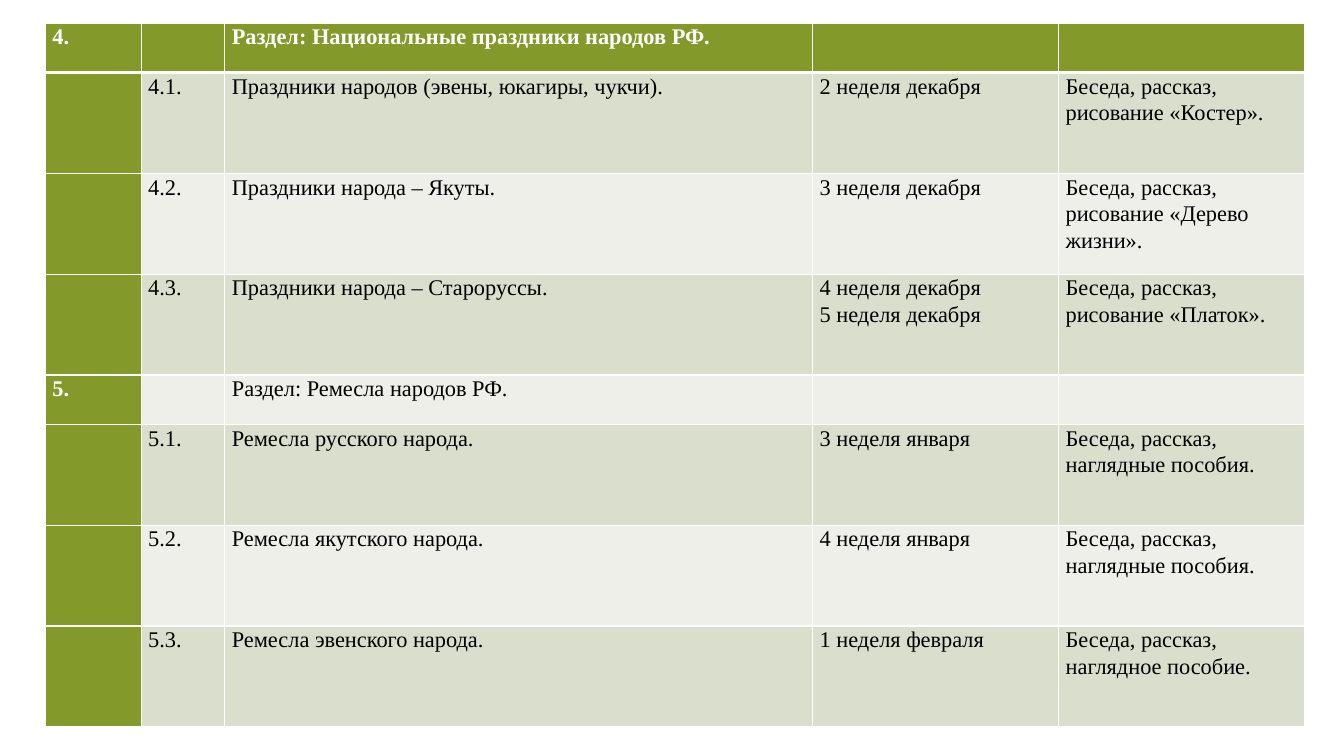
from dataclasses import dataclass

from lxml.etree import SubElement
from pptx import Presentation
from pptx.dml.color import RGBColor
from pptx.oxml.ns import qn
from pptx.util import Emu, Pt


@dataclass(frozen=True)
class Theme:
    font: str = "Times New Roman"
    size: int = 16
    line_spacing: float = 1.07
    accent: str = "83992A"
    dark_band: str = "D9DECD"
    light_band: str = "EDEFE8"
    text: str = "000000"
    inverse: str = "FFFFFF"
    border: int = 1
    header_border: int = 3


def px(length):
    return Emu(length * 9144)


class SlideBuilder:
    def __init__(self, deck, theme):
        self.theme = theme
        self.slide = deck.slides.add_slide(deck.slide_layouts[6])

    def table(self, left, top, widths, heights, rows):
        frame = self.slide.shapes.add_table(
            len(rows), len(widths), px(left), px(top), px(sum(widths)), px(sum(heights))
        )
        table = frame.table
        table.first_col = True
        for column, width in zip(table.columns, widths):
            column.width = px(width)
        for row, height in zip(table.rows, heights):
            row.height = px(height)
        for row_index, texts in enumerate(rows):
            for column_index, text in enumerate(texts):
                self.cell(table.cell(row_index, column_index), text, row_index, column_index)

    def cell(self, cell, text, row_index, column_index):
        theme = self.theme
        heading = row_index == 0 or column_index == 0
        band = theme.dark_band if row_index % 2 else theme.light_band
        cell.margin_left = cell.margin_right = px(7)
        cell.margin_top = cell.margin_bottom = 0
        self.borders(cell, row_index)
        cell.fill.solid()
        cell.fill.fore_color.rgb = RGBColor.from_string(theme.accent if heading else band)
        for index, line in enumerate(text.split("\n")):
            para = cell.text_frame.paragraphs[0] if index == 0 else cell.text_frame.add_paragraph()
            para.line_spacing = theme.line_spacing
            para.font.size = Pt(theme.size)
            if line:
                self.span(para, line, heading)

    def span(self, para, text, heading):
        span = para.add_run()
        span.text = text
        span.font.name = self.theme.font
        span.font.size = Pt(self.theme.size)
        span.font.bold = heading
        color = self.theme.inverse if heading else self.theme.text
        span.font.color.rgb = RGBColor.from_string(color)

    def borders(self, cell, row_index):
        theme = self.theme
        widths = {side: theme.border for side in "LRTB"}
        if row_index == 0:
            widths["B"] = theme.header_border
        if row_index == 1:
            widths["T"] = theme.header_border
        properties = cell._tc.get_or_add_tcPr()
        for side, width in widths.items():
            line = SubElement(properties, qn(f"a:ln{side}"), w=str(Pt(width)))
            fill = SubElement(line, qn("a:solidFill"))
            SubElement(fill, qn("a:srgbClr"), val=theme.inverse)


PLAN = [
    ("4.", "", "Раздел: Национальные праздники народов РФ.", "", ""),
    ("", "4.1.", "Праздники народов (эвены, юкагиры, чукчи).", "2 неделя декабря",
     "Беседа, рассказ, рисование «Костер»."),
    ("", "4.2.", "Праздники народа – Якуты.", "3 неделя декабря",
     "Беседа, рассказ, рисование «Дерево жизни»."),
    ("", "4.3.", "Праздники народа – Староруссы.", "4 неделя декабря\n5 неделя декабря",
     "Беседа, рассказ, рисование «Платок»."),
    ("5.", "", "Раздел: Ремесла народов РФ.", "", ""),
    ("", "5.1.", "Ремесла русского народа.", "3 неделя января",
     "Беседа, рассказ, наглядные пособия."),
    ("", "5.2.", "Ремесла якутского народа.", "4 неделя января",
     "Беседа, рассказ, наглядные пособия."),
    ("", "5.3.", "Ремесла эвенского народа.", "1 неделя февраля",
     "Беседа, рассказ, наглядное пособие."),
]


def main():
    deck = Presentation()
    deck.slide_width, deck.slide_height = px(1333), px(750)
    page = SlideBuilder(deck, Theme())
    heights = [49 if section else 100 for section, *_ in PLAN]
    page.table(45, 23, [95, 83, 583, 244, 244], heights, PLAN)
    deck.save("out.pptx")


if __name__ == "__main__":
    main()
